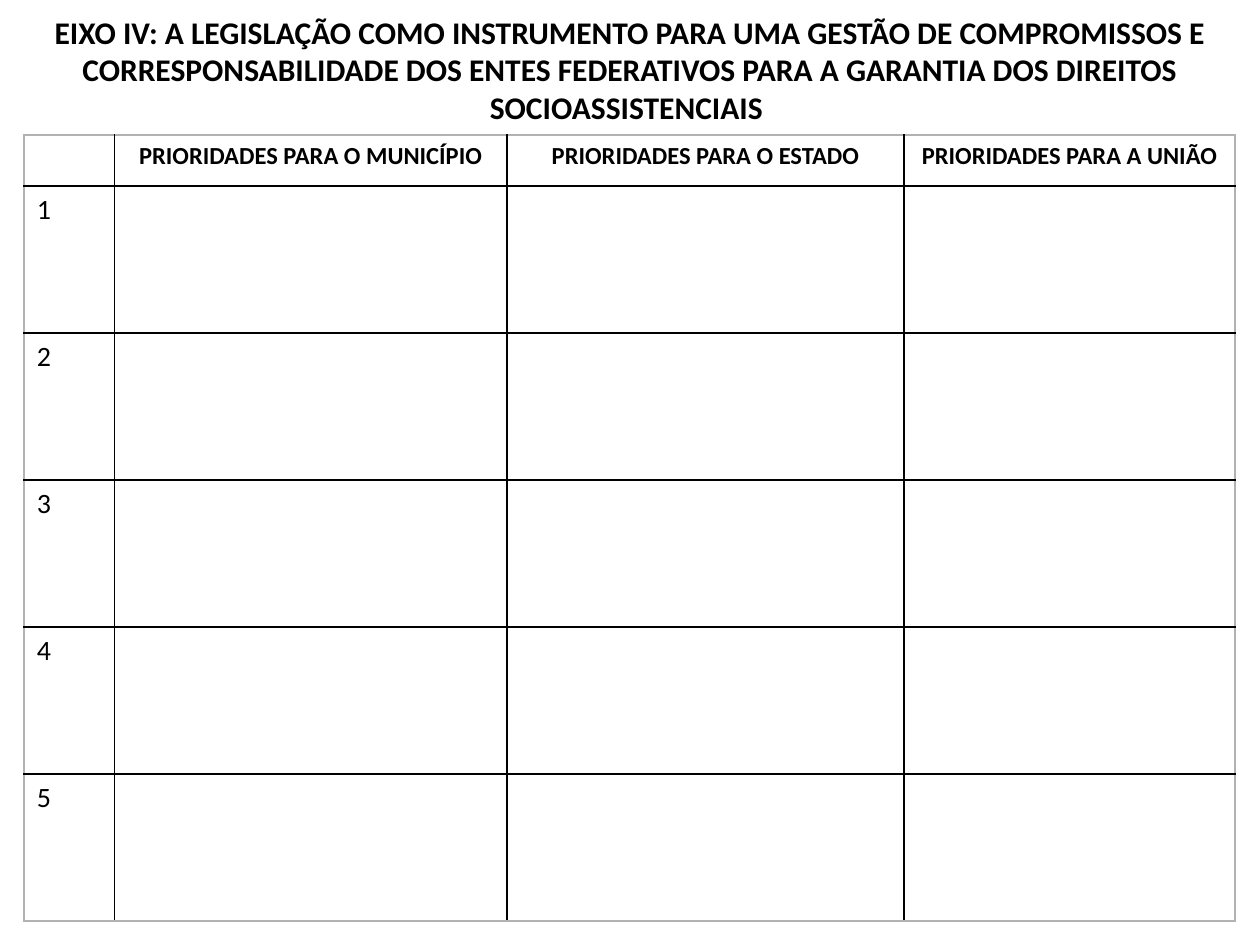
from dataclasses import dataclass

from lxml import etree
from pptx import Presentation
from pptx import util as u
from pptx.dml.color import RGBColor
from pptx.enum import text
from pptx.oxml import ns

BLACK = RGBColor(0x00, 0x00, 0x00)
GRAY = RGBColor(0xB2, 0xB2, 0xB2)
FONT = "Calibri"
TITLE = (
    "EIXO IV: A LEGISLAÇÃO COMO INSTRUMENTO PARA UMA GESTÃO DE COMPROMISSOS E "
    "CORRESPONSABILIDADE DOS ENTES FEDERATIVOS PARA A GARANTIA DOS DIREITOS "
    "SOCIOASSISTENCIAIS "
)


@dataclass(frozen=True)
class Column:
    heading: str
    width: float


COLUMNS = [
    Column("", 51.6),
    Column("PRIORIDADES PARA O MUNICÍPIO", 224.4),
    Column("PRIORIDADES PARA O ESTADO", 226.8),
    Column("PRIORIDADES PARA A UNIÃO", 189.2),
]
PRIORITY_COUNT = 5
HEADER_HEIGHT = 29.2
ROW_HEIGHT = 84


def write(paragraph, content: str, size: float, bold: bool, centered: bool) -> None:
    paragraph.text = content
    paragraph.font.name = FONT
    paragraph.font.size = u.Pt(size)
    paragraph.font.bold = bold
    paragraph.font.color.rgb = BLACK
    paragraph.alignment = (
        text.PP_ALIGN.CENTER if centered else text.PP_ALIGN.LEFT
    )


def set_borders(cell, colors: dict[str, RGBColor]) -> None:
    """Draw the cell sides; they must come before the fill in the cell XML."""
    properties = cell._tc.get_or_add_tcPr()
    for position, (side, color) in enumerate(colors.items()):
        line = etree.Element(ns.qn(f"a:{side}"), w=str(u.Pt(1)))
        fill = etree.SubElement(line, ns.qn("a:solidFill"))
        etree.SubElement(fill, ns.qn("a:srgbClr"), val=str(color))
        properties.insert(position, line)


def add_title(slide) -> None:
    box = slide.shapes.add_textbox(u.Pt(0), u.Pt(3.6), u.Pt(720), u.Pt(72.7))
    box.text_frame.word_wrap = True
    write(box.text_frame.paragraphs[0], TITLE, 18, True, True)


def add_priorities_table(slide) -> None:
    row_count = PRIORITY_COUNT + 1
    width = sum(column.width for column in COLUMNS)
    height = HEADER_HEIGHT + PRIORITY_COUNT * ROW_HEIGHT
    table = slide.shapes.add_table(
        row_count, len(COLUMNS), u.Pt(13.8), u.Pt(77.2), u.Pt(width), u.Pt(height)
    ).table
    table.first_row = table.horz_banding = False

    for index, column in enumerate(COLUMNS):
        table.columns[index].width = u.Pt(column.width)
    for index, row in enumerate(table.rows):
        row.height = u.Pt(ROW_HEIGHT if index else HEADER_HEIGHT)

    # Black inner grid inside a gray frame
    last_row, last_column = row_count - 1, len(COLUMNS) - 1
    for r in range(row_count):
        for c, column in enumerate(COLUMNS):
            cell = table.cell(r, c)
            cell.fill.background()
            set_borders(cell, {
                "lnL": BLACK if c > 0 else GRAY,
                "lnR": BLACK if c < last_column else GRAY,
                "lnT": BLACK if r > 0 else GRAY,
                "lnB": BLACK if r < last_row else GRAY,
            })
            paragraph = cell.text_frame.paragraphs[0]
            if r == 0:
                write(paragraph, column.heading, 14, True, True)
            else:
                write(paragraph, str(r) if c == 0 else "", 16, False, False)


def main() -> None:
    presentation = Presentation()
    presentation.slide_width = u.Pt(720)
    presentation.slide_height = u.Pt(540)
    slide = presentation.slides.add_slide(presentation.slide_layouts[6])
    add_title(slide)
    add_priorities_table(slide)
    presentation.save("out.pptx")


if __name__ == "__main__":
    main()
